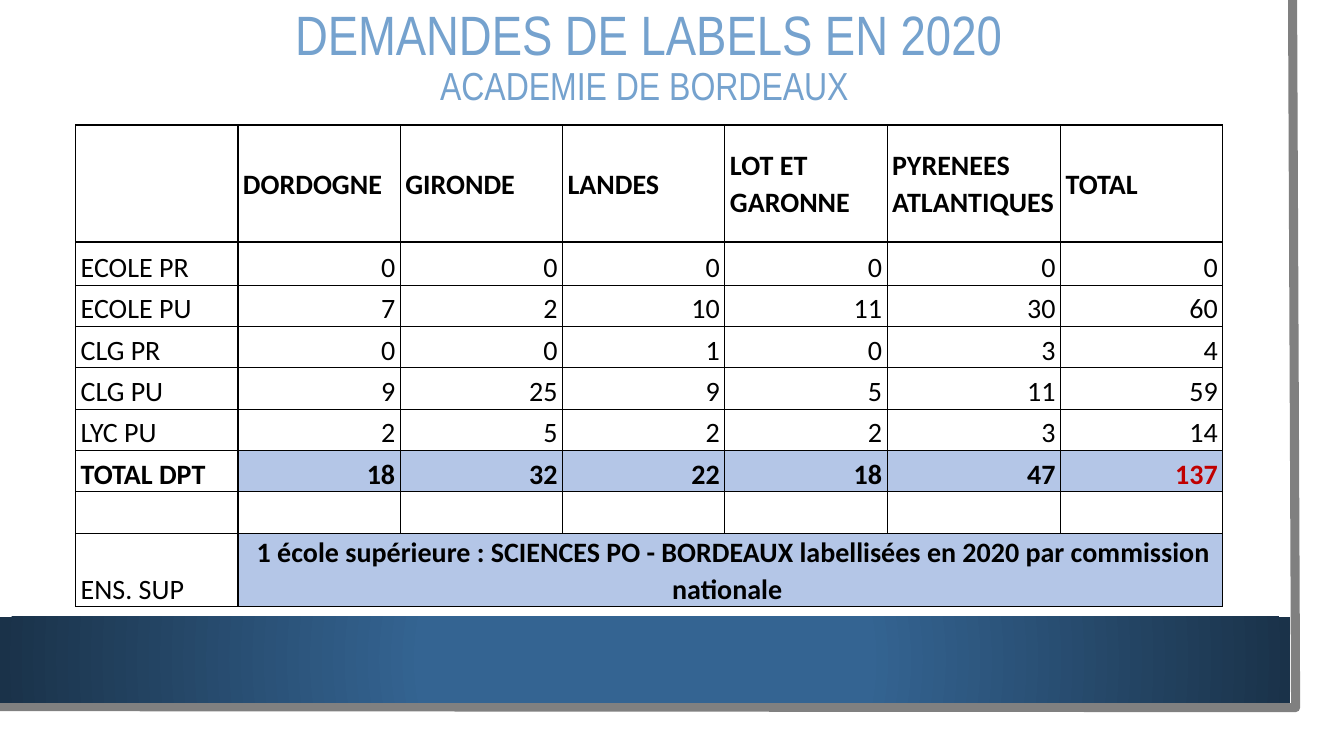
from lxml import etree
from pptx import Presentation
from pptx.dml.color import RGBColor
from pptx.enum.shapes import MSO_SHAPE
from pptx.enum.text import MSO_ANCHOR, MSO_AUTO_SIZE, PP_ALIGN
from pptx.oxml.ns import qn
from pptx.util import Inches, Pt

RECTANGLE = MSO_SHAPE.RECTANGLE
MIDDLE, BOTTOM = MSO_ANCHOR.MIDDLE, MSO_ANCHOR.BOTTOM
LEFT, CENTER, RIGHT = PP_ALIGN.LEFT, PP_ALIGN.CENTER, PP_ALIGN.RIGHT
NO_AUTOFIT = MSO_AUTO_SIZE.NONE

BLACK, RED, PALE_BLUE, TITLE_BLUE = "000000", "C00000", "B4C6E7", "75A2CE"
THIN, THICK = 1, 2.25

DEPARTMENTS = ["DORDOGNE", "GIRONDE", "LANDES", "LOT ET GARONNE",
               "PYRENEES ATLANTIQUES", "TOTAL"]
REQUESTS = [
    ("ECOLE PR", 0, 0, 0, 0, 0, 0),
    ("ECOLE PU", 7, 2, 10, 11, 30, 60),
    ("CLG PR", 0, 0, 1, 0, 3, 4),
    ("CLG PU", 9, 25, 9, 5, 11, 59),
    ("LYC PU", 2, 5, 2, 2, 3, 14),
    ("TOTAL DPT", 18, 32, 22, 18, 47, 137),
]
HIGHER_EDUCATION = (" 1 école supérieure : SCIENCES PO - BORDEAUX labellisées "
                    "en 2020 par commission nationale ")
COLUMN_WIDTHS = [1.61] * 5 + [1.72, 1.61]
ROW_HEIGHTS = [1.16, 0.43] + [0.41] * 6 + [0.73]


def rgb(value):
    return RGBColor.from_string(value)


def add_page_edge(slide, left, top, right, bottom):
    """Grey line down the right side of the page and back along its foot."""
    outline = slide.shapes.build_freeform(
        Inches(right - 0.03), Inches(top), scale=1.0)
    outline.add_line_segments(
        [(Inches(right), Inches(bottom)), (Inches(left), Inches(bottom - 0.01))],
        close=False)
    edge = outline.convert_to_shape()
    edge.shadow.inherit = False
    edge.fill.background()
    edge.line.color.rgb = rgb("808080")
    edge.line.width = Pt(6.5)


def add_footer_band(slide, left, top, width, height):
    band = slide.shapes.add_shape(
        RECTANGLE, Inches(left), Inches(top), Inches(width), Inches(height))
    band.shadow.inherit = False
    band.line.fill.background()
    band.fill.gradient()
    inner, outer = band.fill.gradient_stops
    for stop, position, color in ((inner, 0.34, "346492"), (outer, 1, "1A3249")):
        stop.position = position
        stop.color.rgb = rgb(color)
    # Radial shading from the centre replaces the default linear one
    gradient = band.element.spPr.find(qn("a:gradFill"))
    gradient.remove(gradient.find(qn("a:lin")))
    radial = etree.SubElement(gradient, qn("a:path"), path="circle")
    etree.SubElement(radial, qn("a:fillToRect"),
                     l="50000", t="50000", r="50000", b="50000")


def set_title(slide, left, top, width, height):
    title = slide.shapes.title
    title.left, title.top = Inches(left), Inches(top)
    title.width, title.height = Inches(width), Inches(height)
    frame = title.text_frame
    frame.word_wrap = True
    frame.auto_size = NO_AUTOFIT
    frame.vertical_anchor = MIDDLE
    heading = frame.paragraphs[0]
    heading.alignment = CENTER
    heading.line_spacing = 0.9
    heading.font.name = "Arial Narrow"
    heading.font.color.rgb = rgb(TITLE_BLUE)
    for text, size in (("DEMANDES DE LABELS EN 2020", 39.6),
                       ("ACADEMIE DE BORDEAUX ", 27.9)):
        if heading.runs:
            heading.add_line_break()
        run = heading.add_run()
        run.text = text
        run.font.size = Pt(size)


def set_borders(cell, top=THIN, bottom=THIN):
    properties = cell._tc.get_or_add_tcPr()
    sides = (("lnL", THIN), ("lnR", THIN), ("lnT", top), ("lnB", bottom))
    for index, (side, width) in enumerate(sides):
        line = etree.Element(qn(f"a:{side}"), w=str(Pt(width)))
        fill = etree.SubElement(line, qn("a:solidFill"))
        etree.SubElement(fill, qn("a:srgbClr"), val=BLACK)
        properties.insert(index, line)


def write_cell(cell, text, align=LEFT, anchor=BOTTOM, bold=False, color=BLACK):
    cell.margin_left = cell.margin_right = Inches(0.05)
    cell.margin_top = cell.margin_bottom = 0
    cell.vertical_anchor = anchor
    cell.text = str(text)
    paragraph = cell.text_frame.paragraphs[0]
    paragraph.alignment = align
    paragraph.line_spacing = 1.07
    font = paragraph.font
    font.name, font.size, font.bold = "Calibri", Pt(20), bold
    font.color.rgb = rgb(color)


def shade(cell):
    cell.fill.solid()
    cell.fill.fore_color.rgb = rgb(PALE_BLUE)


def add_requests_table(slide, left, top):
    table = slide.shapes.add_table(
        len(ROW_HEIGHTS), len(COLUMN_WIDTHS), Inches(left), Inches(top),
        Inches(sum(COLUMN_WIDTHS)), Inches(sum(ROW_HEIGHTS))).table
    table.first_row = table.horz_banding = False
    for column, width in zip(table.columns, COLUMN_WIDTHS):
        column.width = Inches(width)
    for row, height in zip(table.rows, ROW_HEIGHTS):
        row.height = Inches(height)

    for r, row in enumerate(table.rows):
        for c, cell in enumerate(row.cells):
            cell.fill.background()
            set_borders(cell, top=THICK if r == 1 and c else THIN,
                        bottom=THICK if r == 0 and c else THIN)

    for c, department in enumerate(DEPARTMENTS, start=1):
        write_cell(table.cell(0, c), department, anchor=MIDDLE, bold=True)
    total_row = len(REQUESTS)
    for r, (level, *counts) in enumerate(REQUESTS, start=1):
        is_total = r == total_row
        write_cell(table.cell(r, 0), level, bold=is_total)
        for c, count in enumerate(counts, start=1):
            grand_total = is_total and c == len(counts)
            write_cell(table.cell(r, c), count, RIGHT, bold=is_total,
                       color=RED if grand_total else BLACK)
            if is_total:
                shade(table.cell(r, c))

    last = len(ROW_HEIGHTS) - 1
    write_cell(table.cell(last, 0), "ENS. SUP")
    remark = table.cell(last, 1)
    remark.merge(table.cell(last, len(DEPARTMENTS)))
    write_cell(remark, HIGHER_EDUCATION, CENTER, bold=True)
    shade(remark)


def main():
    presentation = Presentation()
    presentation.slide_width, presentation.slide_height = Inches(13.33), Inches(7.5)
    slide = presentation.slides.add_slide(presentation.slide_layouts[5])
    add_page_edge(slide, -0.03, 0, 12.85, 7.02)
    add_footer_band(slide, 0, 6.12, 12.8, 0.85)
    set_title(slide, 0.75, 0.2, 11.37, 0.76)
    add_requests_table(slide, 0.75, 1.24)
    presentation.save("out.pptx")


if __name__ == "__main__":
    main()
